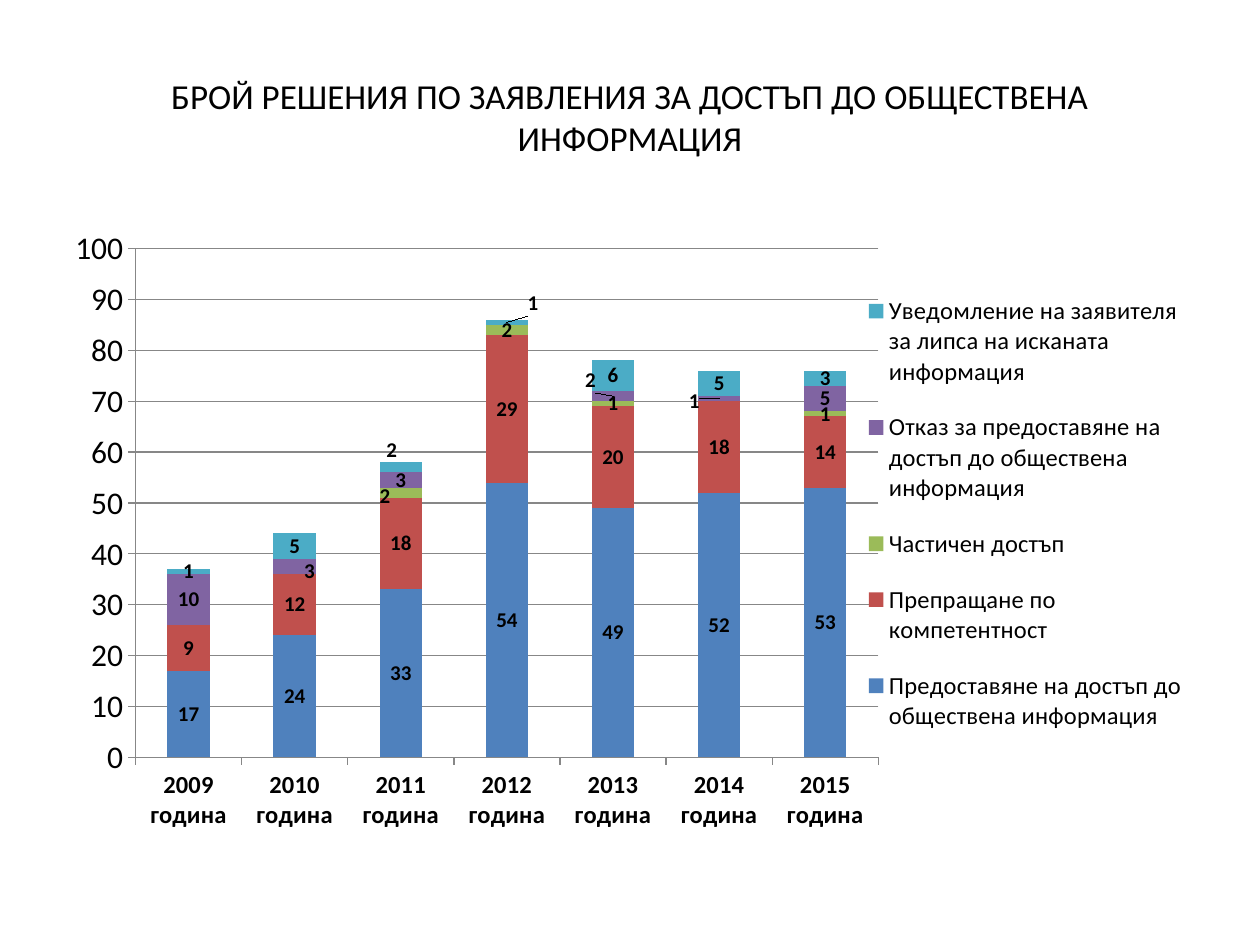
from pptx import Presentation
from pptx.chart.data import CategoryChartData
from pptx.dml.color import RGBColor
from pptx.enum.chart import XL_CHART_TYPE, XL_LEGEND_POSITION, XL_TICK_MARK
from pptx.enum.text import MSO_ANCHOR, PP_ALIGN
from pptx.oxml import parse_xml
from pptx.oxml.ns import nsdecls
from pptx.util import Pt

STACKED = XL_CHART_TYPE.COLUMN_STACKED
LEGEND_RIGHT = XL_LEGEND_POSITION.RIGHT
TICK_OUTSIDE = XL_TICK_MARK.OUTSIDE
MIDDLE, CENTER = MSO_ANCHOR.MIDDLE, PP_ALIGN.CENTER

FONT = "Calibri"
COLORS = {"text": "000000", "line": "878787", "granted": "4F81BD",
          "forwarded": "C0504D", "partial": "9BBB59", "refused": "8064A2",
          "notified": "4BACC6"}

TITLE = "БРОЙ РЕШЕНИЯ ПО ЗАЯВЛЕНИЯ ЗА ДОСТЪП ДО ОБЩЕСТВЕНА ИНФОРМАЦИЯ"
YEARS = [f"{year} година" for year in range(2009, 2016)]

# name, colour, values, label shifts {year index: (x, y) as share of the chart}
SERIES = [
    ("Предоставяне на достъп до обществена информация", "granted",
     (17, 24, 33, 54, 49, 52, 53), {}),
    ("Препращане по компетентност", "forwarded",
     (9, 12, 18, 29, 20, 18, 14), {}),
    ("Частичен достъп", "partial",
     (0, 0, 2, 2, 1, 0, 1), {2: (-0.014, 0.006)}),
    ("Отказ за предоставяне на достъп до обществена информация", "refused",
     (10, 3, 3, 0, 2, 1, 5),
     {1: (0.013, 0.008), 4: (-0.02, -0.025), 5: (-0.022, 0.005)}),
    ("Уведомление на заявителя за липса на исканата информация", "notified",
     (1, 5, 2, 1, 6, 5, 3), {2: (-0.008, -0.027), 3: (0.023, -0.03)}),
]
PLOT_AREA = {"x": 0.064, "y": 0.045, "w": 0.655, "h": 0.816}
LEGEND_AREA = {"x": 0.707, "y": 0.08, "w": 0.283, "h": 0.78}


def color(name):
    return RGBColor.from_string(COLORS[name])


def set_font(font, size, bold=False):
    font.name, font.size, font.bold = FONT, Pt(size), bold
    font.color.rgb = color("text")


def add_text(page, text, left, top, width, height, size, bold=False):
    box = page.shapes.add_textbox(Pt(left), Pt(top), Pt(width), Pt(height))
    frame = box.text_frame
    frame.word_wrap = True
    frame.vertical_anchor = MIDDLE
    para = frame.paragraphs[0]
    para.alignment = CENTER
    span = para.add_run()
    span.text = text
    set_font(span.font, size, bold)


def manual_layout(target=None, edges=False, **measures):
    """Return a c:layout element; edges makes x and y absolute positions."""
    parts = [f'<c:layoutTarget val="{target}"/>'] if target else []
    if edges:
        parts += ['<c:xMode val="edge"/>', '<c:yMode val="edge"/>']
    parts += [f'<c:{key} val="{value}"/>' for key, value in measures.items()]
    return parse_xml(f'<c:layout {nsdecls("c")}><c:manualLayout>'
                     f'{"".join(parts)}</c:manualLayout></c:layout>')


def place(parent, layout, index):
    for old in parent.xpath("c:layout"):
        parent.remove(old)
    parent.insert(index, layout)


def style_series(series, fill, shifts):
    series.format.fill.solid()
    series.format.fill.fore_color.rgb = color(fill)
    labels = series.data_labels
    labels.show_value = True
    labels.number_format = "0;;"  # zeros stay blank
    labels.number_format_is_linked = False
    set_font(labels.font, 12, True)
    for index, (x, y) in shifts.items():
        set_font(series.points[index].data_label.font, 12, True)
        label = series._element.xpath(
            f"c:dLbls/c:dLbl[c:idx/@val='{index}']")[0]
        place(label, manual_layout(x=x, y=y), 1)


def style_axis(axis, size, bold=False):
    set_font(axis.tick_labels.font, size, bold)
    axis.major_tick_mark = TICK_OUTSIDE
    axis.format.line.color.rgb = color("line")


def add_decision_chart(page):
    data = CategoryChartData()
    data.categories = YEARS
    for name, _, values, _ in SERIES:
        data.add_series(name, values)
    chart = page.shapes.add_chart(
        STACKED, Pt(36), Pt(126), Pt(648), Pt(356.4), data).chart
    set_font(chart.font, 18)
    chart.has_title = False

    plot = chart.plots[0]
    plot.overlap, plot.gap_width = 100, 150
    plot.vary_by_categories = False
    for series, (_, fill, _, shifts) in zip(plot.series, SERIES):
        style_series(series, fill, shifts)

    style_axis(chart.category_axis, 14, True)
    values = chart.value_axis
    style_axis(values, 18)
    values.minimum_scale, values.maximum_scale, values.major_unit = 0, 100, 10
    values.has_major_gridlines = True
    values.major_gridlines.format.line.color.rgb = color("line")

    chart.has_legend = True
    chart.legend.position = LEGEND_RIGHT
    chart.legend.include_in_layout = False
    set_font(chart.legend.font, 14)
    place(chart.legend._element, manual_layout(edges=True, **LEGEND_AREA), 1)
    plot_area = chart._chartSpace.xpath("c:chart/c:plotArea")[0]
    place(plot_area, manual_layout("inner", True, **PLOT_AREA), 0)


def main():
    deck = Presentation()
    deck.slide_width, deck.slide_height = Pt(720), Pt(540)
    page = deck.slides.add_slide(deck.slide_layouts[6])
    add_text(page, TITLE, 36, 21.6, 648, 90, size=20)
    add_decision_chart(page)
    deck.save("out.pptx")


if __name__ == "__main__":
    main()
